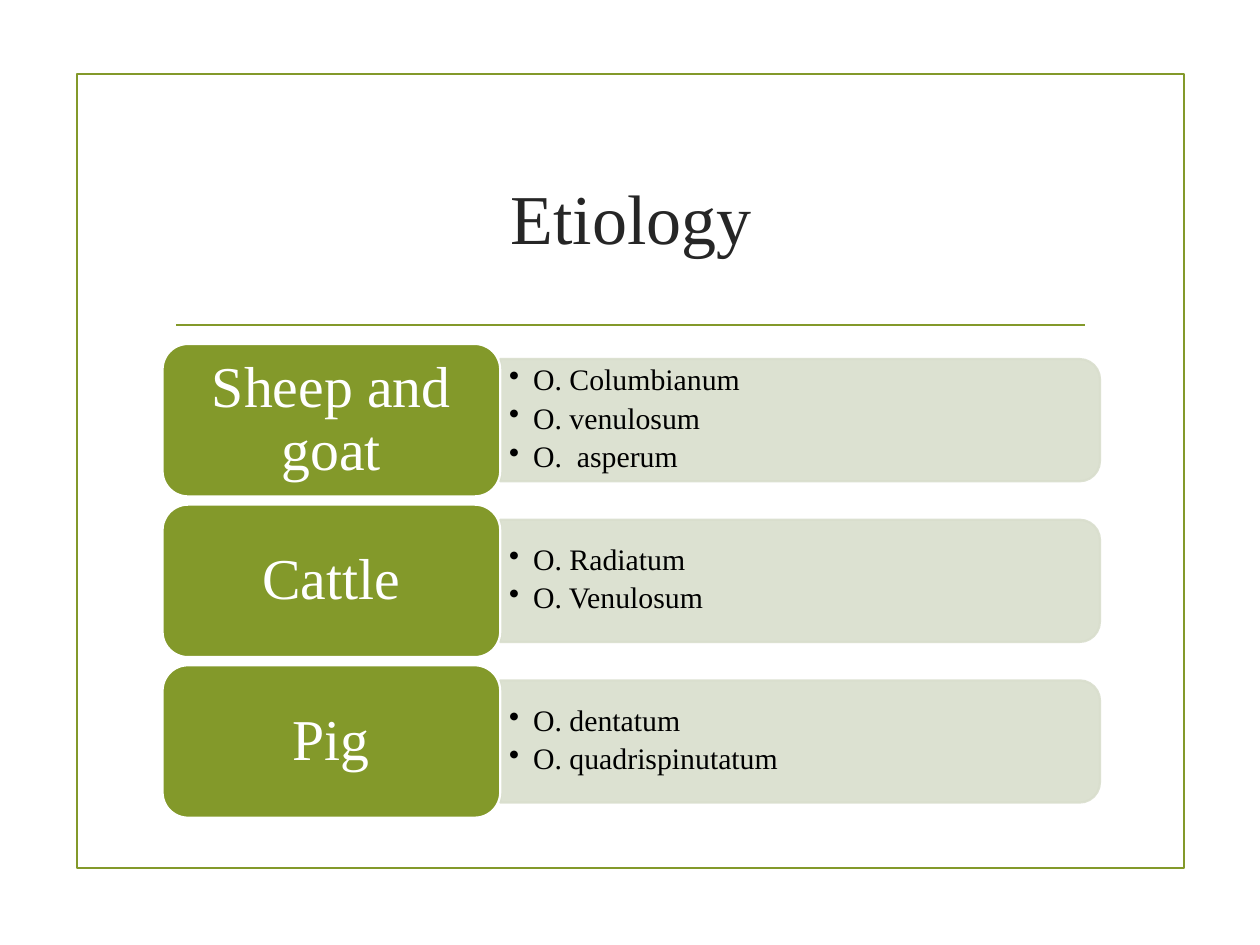
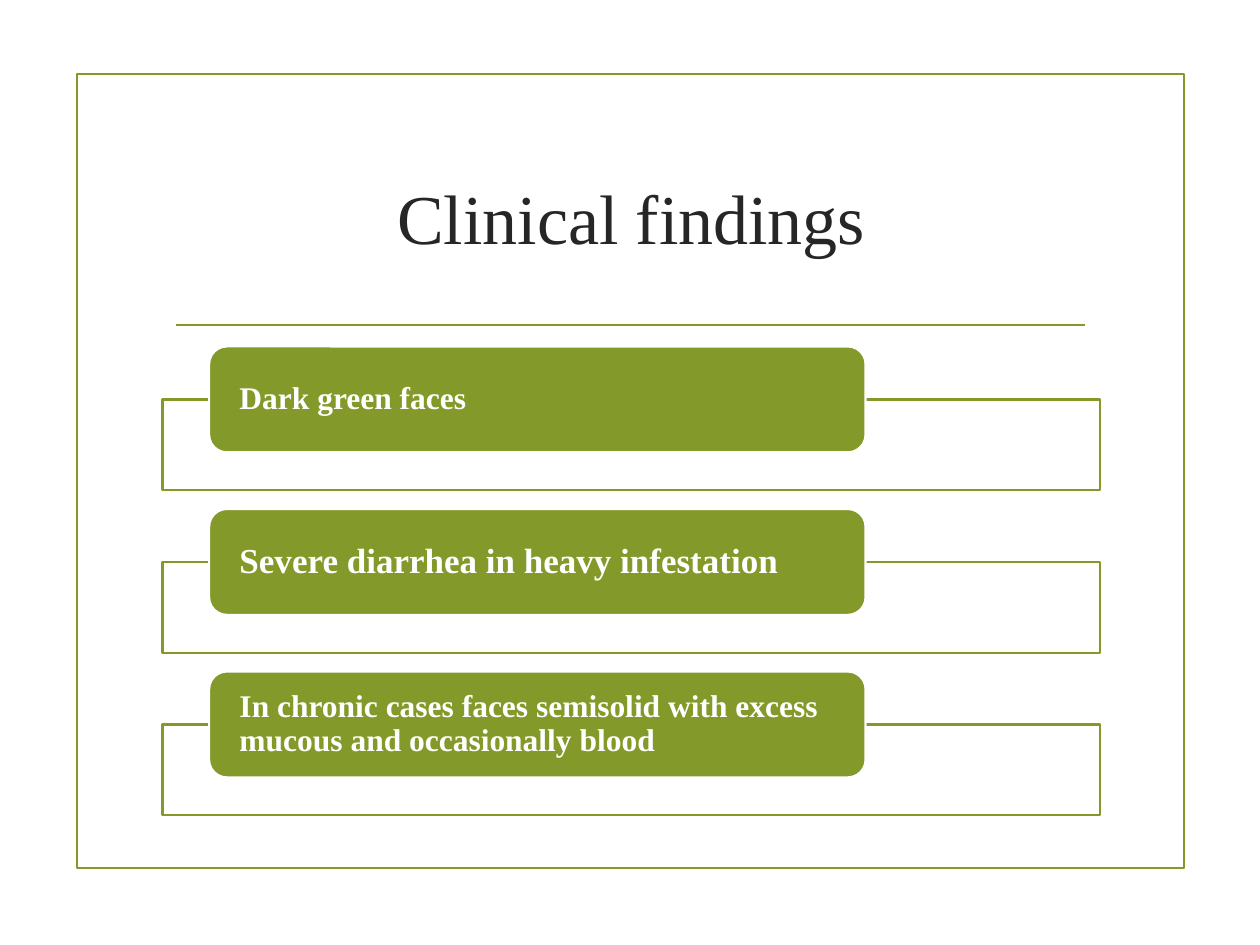
from lxml import etree
from pptx import Presentation
from pptx.dml.color import RGBColor
from pptx.enum.shapes import MSO_CONNECTOR, MSO_SHAPE
from pptx.enum.text import MSO_ANCHOR, PP_ALIGN
from pptx.oxml.ns import qn
from pptx.util import Inches, Pt

FONT = "Times New Roman"
COLORS = {
    "green": "83992A",
    "panel": "D9DECD",
    "white": "FFFFFF",
    "black": "000000",
    "title": "262626",
}
LINE_WIDTH = Pt(1.25)
CONTENT_LEFT, CONTENT_WIDTH = 1.29, 7.44

SPECIES = [
    ("Sheep and goat", ["O. Columbianum", "O. venulosum", "O.  asperum"]),
    ("Cattle", ["O. Radiatum", "O. Venulosum"]),
    ("Pig", ["O. dentatum", "O. quadrispinutatum"]),
]
FINDINGS = [
    ("Dark green faces", 18),
    ("Severe diarrhea in heavy infestation", 20),
    ("In chronic cases faces semisolid with excess mucous and occasionally blood", 18),
]


def rgb(name):
    return RGBColor.from_string(COLORS[name])


def row_tops(first, last, count):
    step = (last - first) / (count - 1)
    return [first + index * step for index in range(count)]


def set_opacity(solid_fill, percent):
    color = solid_fill.find(qn("a:srgbClr"))
    etree.SubElement(color, qn("a:alpha"), val=str(percent * 1000))


def add_box(slide, kind, left, top, width, height, fill, line, opacity=100):
    shape = slide.shapes.add_shape(
        kind, Inches(left), Inches(top), Inches(width), Inches(height))
    shape.shadow.inherit = False
    shape.line.color.rgb = rgb(line)
    shape.line.width = LINE_WIDTH
    if fill is None:
        shape.fill.background()
    else:
        shape.fill.solid()
        shape.fill.fore_color.rgb = rgb(fill)
        if opacity < 100:
            set_opacity(shape.element.spPr.find(qn("a:solidFill")), opacity)
    return shape


def set_frame(frame, margin_x, margin_y):
    frame.word_wrap = True
    frame.vertical_anchor = MSO_ANCHOR.MIDDLE
    frame.margin_left = frame.margin_right = Inches(margin_x)
    frame.margin_top = frame.margin_bottom = Inches(margin_y)


def add_run(paragraph, text, size, color, bold=False):
    run = paragraph.add_run()
    run.text = text
    run.font.name = FONT
    run.font.size = Pt(size)
    run.font.bold = bold
    run.font.color.rgb = rgb(color)


def add_label(slide, text, box, size, margins, align, bold=False):
    """Green rounded box with white text."""
    shape = add_box(slide, MSO_SHAPE.ROUNDED_RECTANGLE, *box, "green", "white")
    set_frame(shape.text_frame, *margins)
    paragraph = shape.text_frame.paragraphs[0]
    paragraph.alignment = align
    paragraph.line_spacing = 0.9
    add_run(paragraph, text, size, "white", bold)


def add_bullets(slide, items, left, top, width, height):
    text_box = slide.shapes.add_textbox(
        Inches(left), Inches(top), Inches(width), Inches(height))
    frame = text_box.text_frame
    set_frame(frame, 0.07, 0.04)
    for index, item in enumerate(items):
        paragraph = frame.add_paragraph() if index else frame.paragraphs[0]
        paragraph.line_spacing = 0.9
        paragraph.space_after = Pt(3.5)
        properties = paragraph._p.get_or_add_pPr()
        properties.set("marL", str(Inches(0.19)))
        properties.set("indent", str(Inches(-0.19)))
        etree.SubElement(properties, qn("a:buChar"), char="•")
        add_run(paragraph, item, 17, "black")


def add_side_panel(slide, left, top, width, height):
    """Panel rounded on the right: a top-rounded shape turned a quarter."""
    shape = add_box(
        slide, MSO_SHAPE.ROUND_2_SAME_RECTANGLE,
        left + (width - height) / 2, top - (width - height) / 2, height, width,
        "panel", "panel", opacity=90)
    shape.rotation = 90
    line_fill = shape.element.spPr.find(qn("a:ln")).find(qn("a:solidFill"))
    set_opacity(line_fill, 90)


def add_title_slide(presentation, title):
    """Slide with the shared frame, rule and title."""
    slide = presentation.slides.add_slide(presentation.slide_layouts[5])
    add_box(slide, MSO_SHAPE.RECTANGLE, 0.61, 0.59, 8.79, 6.3, None, "green")

    rule = slide.shapes.add_connector(
        MSO_CONNECTOR.STRAIGHT, Inches(1.4), Inches(2.58), Inches(8.61), Inches(2.58))
    rule.line.color.rgb = rgb("green")
    rule.line.width = LINE_WIDTH
    etree.SubElement(rule.element.spPr, qn("a:effectLst"))

    placeholder = slide.shapes.title
    placeholder.left, placeholder.top = Inches(CONTENT_LEFT), Inches(1)
    placeholder.width, placeholder.height = Inches(CONTENT_WIDTH), Inches(1.43)
    set_frame(placeholder.text_frame, 0.1, 0.05)
    paragraph = placeholder.text_frame.paragraphs[0]
    paragraph.alignment = PP_ALIGN.CENTER
    add_run(paragraph, title, 40, "title")
    return slide


def add_etiology(presentation):
    slide = add_title_slide(presentation, "Etiology")
    label_width, label_height = 2.68, 1.21
    panel_left = CONTENT_LEFT + label_width
    panel_width = CONTENT_WIDTH - label_width
    for top, (animal, worms) in zip(row_tops(2.73, 5.28, len(SPECIES)), SPECIES):
        add_side_panel(slide, panel_left, top + 0.12, panel_width, 0.97)
        add_bullets(slide, worms, panel_left, top + 0.16, 4.71, 0.88)
        add_label(slide, animal, (CONTENT_LEFT, top, label_width, label_height),
                  33, (0.14, 0.07), PP_ALIGN.CENTER)


def add_clinical_findings(presentation):
    slide = add_title_slide(presentation, "Clinical findings")
    for top, (finding, size) in zip(row_tops(2.75, 5.33, len(FINDINGS)), FINDINGS):
        add_box(slide, MSO_SHAPE.RECTANGLE, CONTENT_LEFT, top + 0.42,
                CONTENT_WIDTH, 0.72, "white", "green", opacity=90)
        add_label(slide, finding, (1.66, top, 5.21, 0.84),
                  size, (0.2, 0), PP_ALIGN.LEFT, bold=True)


def main():
    presentation = Presentation()
    presentation.slide_width = Inches(10)
    presentation.slide_height = Inches(7.5)
    add_etiology(presentation)
    add_clinical_findings(presentation)
    presentation.save("out.pptx")


if __name__ == "__main__":
    main()
